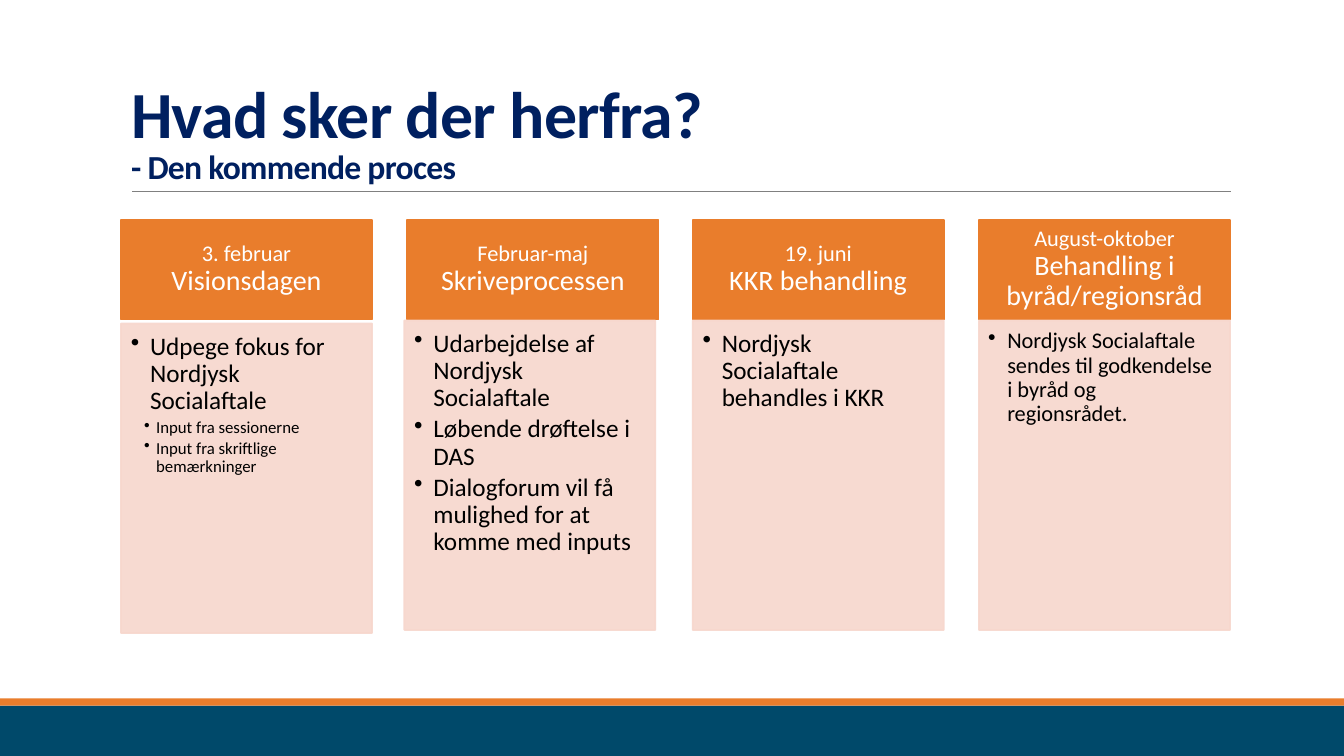
from dataclasses import dataclass

from lxml.etree import SubElement
from pptx import Presentation
from pptx.dml.color import RGBColor
from pptx.enum.shapes import MSO_CONNECTOR as Connector, MSO_SHAPE as Shape
from pptx.enum.text import MSO_ANCHOR as Anchor, MSO_AUTO_SIZE as AutoSize, PP_ALIGN as Align
from pptx.oxml.ns import qn
from pptx.util import Pt

EMU_PER_PX = 9144  # 100 px to the inch
FONT = "Calibri"
NAVY = RGBColor(0x00, 0x20, 0x60)
TEAL = RGBColor(0x00, 0x49, 0x6A)
ORANGE = RGBColor(0xE9, 0x7D, 0x2C)
ROSE = RGBColor(0xF7, 0xD7, 0xCD)
GREY = RGBColor(0x80, 0x80, 0x80)
WHITE = RGBColor(0xFF, 0xFF, 0xFF)
BLACK = RGBColor(0x00, 0x00, 0x00)

SLIDE_W, SLIDE_H = 1333, 750
CARD_W, HEAD_H, LIST_H = 249, 99, 307
HEAD_TOP, LIST_TOP = 218, 318
FIRST_LEFT, LAST_LEFT = 120, 971
HEAD_INSETS = (12, 7, 12, 7)
LIST_INSETS = (10, 10, 14, 16)


@dataclass(frozen=True)
class Bullet:
    text: str
    size: int = 18
    margin: int = 19
    hang: int = 19


@dataclass(frozen=True)
class Stage:
    date: str
    name: str
    bullets: tuple[Bullet, ...]
    list_dx: int = 0
    list_dy: int = 0
    list_insets: tuple[int, int, int, int] = LIST_INSETS


def sub_bullet(text: str) -> Bullet:
    return Bullet(text, size=12, margin=25, hang=12)


STAGES = (
    Stage("3. februar", "Visionsdagen", (
        Bullet("Udpege fokus for Nordjysk Socialaftale"),
        sub_bullet("Input fra sessionerne"),
        sub_bullet("Input fra skriftlige bemærkninger"),
    ), list_dy=3),
    Stage("Februar-maj", "Skriveprocessen", (
        Bullet("Udarbejdelse af Nordjysk Socialaftale"),
        Bullet("Løbende drøftelse i DAS"),
        Bullet("Dialogforum vil få mulighed for at komme med inputs"),
    ), list_dx=-3),
    Stage("19. juni", "KKR behandling", (
        Bullet("Nordjysk Socialaftale behandles i KKR"),
    )),
    Stage("August-oktober", "Behandling i byråd/regionsråd", (
        Bullet("Nordjysk Socialaftale sendes til godkendelse i byråd og regionsrådet.", size=16),
    ), list_insets=(9, 9, 12, 14)),
)


def px(n: int) -> int:
    return n * EMU_PER_PX


def write(p, text: str, *, size: int, color: RGBColor, bold: bool = False, tracking: int = 0) -> None:
    """Append a run; tracking is in hundredths of a point."""
    r = p.add_run()
    r.text = text
    r.font.name, r.font.size, r.font.bold = FONT, Pt(size), bold
    r.font.color.rgb = color
    if tracking:
        r._r.get_or_add_rPr().set("spc", str(tracking))


def add_box(slide, left: int, top: int, width: int, height: int, color: RGBColor, *,
            outlined: bool = False, opacity: int = 100):
    s = slide.shapes.add_shape(Shape.RECTANGLE, px(left), px(top), px(width), px(height))
    s.shadow.inherit = False
    s.fill.solid()
    s.fill.fore_color.rgb = color
    if outlined:
        s.line.color.rgb = color
        s.line.width = Pt(1.25)
    else:
        s.line.fill.background()
    if opacity < 100:
        for clr in s._element.spPr.iter(qn("a:srgbClr")):
            SubElement(clr, qn("a:alpha"), val=str(opacity * 1000))
    return s


def set_frame(tf, insets: tuple[int, int, int, int], anchor: Anchor) -> None:
    tf.word_wrap = True
    tf.auto_size = AutoSize.NONE
    tf.vertical_anchor = anchor
    tf.margin_left, tf.margin_top, tf.margin_right, tf.margin_bottom = map(px, insets)


def set_bullet(p, bullet: Bullet) -> None:
    pPr = p._p.get_or_add_pPr()
    pPr.set("marL", str(px(bullet.margin)))
    pPr.set("indent", str(-px(bullet.hang)))
    SubElement(pPr, qn("a:buChar"), char="•")


def add_title(slide) -> None:
    s = slide.shapes.title
    s.left, s.top, s.width, s.height = map(px, (120, 31, 1100, 159))
    set_frame(s.text_frame, (10, 5, 10, 5), Anchor.BOTTOM)
    p = s.text_frame.paragraphs[0]
    p.alignment = Align.LEFT
    p.line_spacing = 0.85
    write(p, "Hvad sker der herfra?", size=47, color=NAVY, bold=True, tracking=-50)
    p.add_line_break()
    write(p, "- Den kommende proces", size=24, color=NAVY, bold=True, tracking=-50)


def add_rule(slide) -> None:
    line = slide.shapes.add_connector(Connector.STRAIGHT, px(131), px(190), px(1221), px(190))
    line.line.color.rgb = GREY
    line.line.width = Pt(0.5)
    SubElement(line._element.spPr, qn("a:effectLst"))


def add_stage(slide, stage: Stage, left: int) -> None:
    head = add_box(slide, left, HEAD_TOP, CARD_W, HEAD_H, ORANGE, outlined=True)
    set_frame(head.text_frame, HEAD_INSETS, Anchor.MIDDLE)
    p = head.text_frame.paragraphs[0]
    p.alignment = Align.CENTER
    p.line_spacing = 0.9
    write(p, stage.date, size=16, color=WHITE)
    p.add_line_break()
    write(p, stage.name, size=20, color=WHITE)

    body = add_box(slide, left + stage.list_dx, LIST_TOP + stage.list_dy, CARD_W, LIST_H, ROSE,
                   outlined=True, opacity=90)
    tf = body.text_frame
    set_frame(tf, stage.list_insets, Anchor.TOP)
    for i, bullet in enumerate(stage.bullets):
        p = tf.add_paragraph() if i else tf.paragraphs[0]
        p.alignment = Align.LEFT
        p.line_spacing = 0.9
        p.space_after = Pt(bullet.size * 0.15)
        set_bullet(p, bullet)
        write(p, bullet.text, size=bullet.size, color=BLACK)


def main() -> None:
    prs = Presentation()
    prs.slide_width, prs.slide_height = px(SLIDE_W), px(SLIDE_H)
    slide = prs.slides.add_slide(prs.slide_layouts.get_by_name("Title Only"))
    add_box(slide, 0, 700, SLIDE_W, 50, TEAL)
    add_box(slide, 0, 693, SLIDE_W, 7, ORANGE)
    add_rule(slide)
    add_title(slide)
    pitch = (LAST_LEFT - FIRST_LEFT) / (len(STAGES) - 1)
    for i, stage in enumerate(STAGES):
        add_stage(slide, stage, FIRST_LEFT + round(i * pitch))
    prs.save("out.pptx")


if __name__ == "__main__":
    main()
